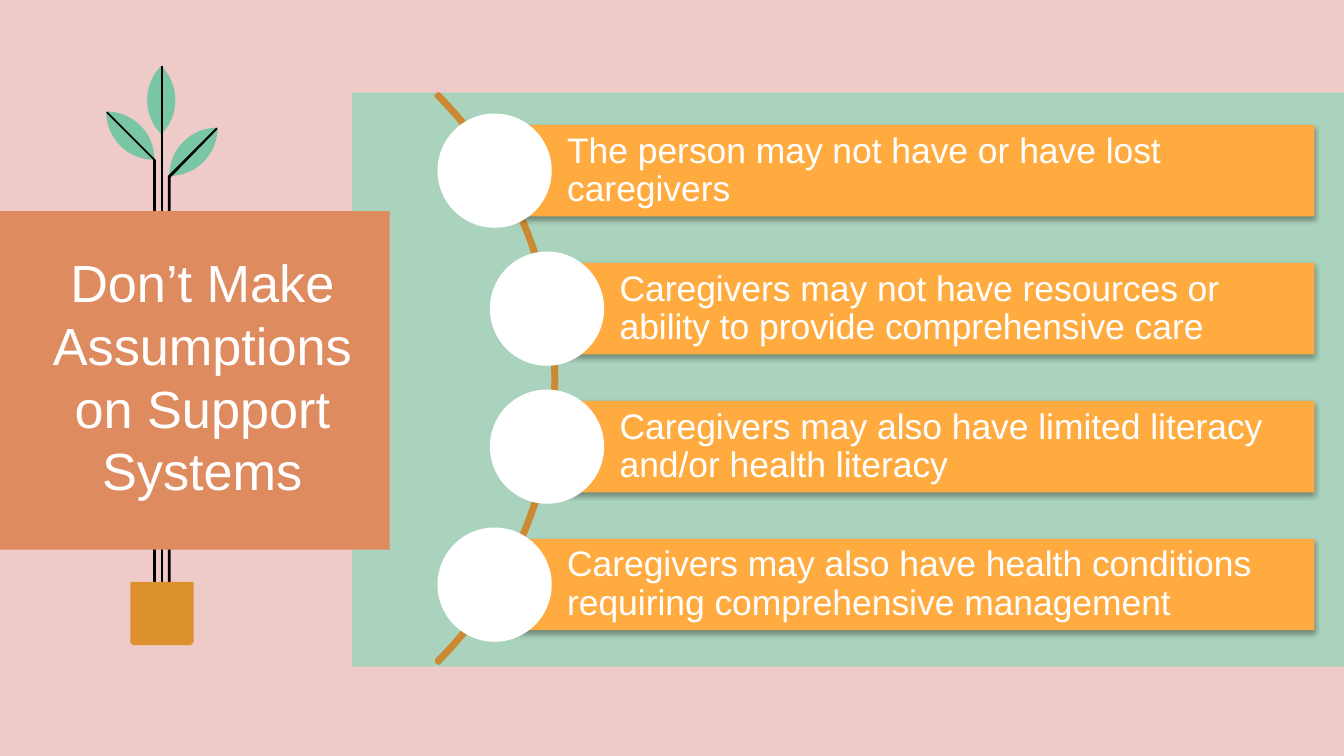
"""Builds a slide on assumptions about support systems."""
from lxml import etree
from pptx import Presentation
from pptx.dml.color import RGBColor
from pptx.enum.shapes import MSO_SHAPE as SHAPE
from pptx.enum.text import MSO_ANCHOR as ANCHOR, PP_ALIGN as ALIGN
from pptx.oxml.ns import qn
from pptx.util import Inches, Pt

PINK, MINT, LEAF, CLAY = "EECAC8", "AAD3BD", "79C6A5", "DF8B60"
POT, ARC, AMBER, WHITE, BLACK = "DD902E", "CC8933", "FFAB40", "FFFFFF", "000000"

POINTS = [
    (3.68, "The person may not have or have lost caregivers"),
    (4.07, "Caregivers may not have resources or ability to provide comprehensive care"),
    (4.07, "Caregivers may also have limited literacy and/or health literacy"),
    (3.68, "Caregivers may also have health conditions requiring comprehensive management"),
]
LEAVES = [
    [(0.79, 0.83), (0.79, 1.03), (0.95, 1.19), (1.15, 1.19), (1.15, 0.99), (0.99, 0.83)],
    [(1.62, 0.95), (1.42, 0.95), (1.26, 1.11), (1.26, 1.31), (1.46, 1.31), (1.62, 1.15)],
    [(1.2, 0.49), (1.06, 0.63), (1.06, 0.86), (1.2, 1), (1.34, 0.86), (1.34, 0.63)],
]
STEMS = [
    [(1.2, 0.49), (1.2, 1.64), (1.21, 1.64), (1.21, 0.49)],
    [(1.61, 0.95), (1.25, 1.31), (1.25, 1.64), (1.27, 1.64), (1.27, 1.32), (1.62, 0.96)],
    [(0.8, 0.83), (0.79, 0.84), (1.14, 1.19), (1.14, 1.64), (1.16, 1.64), (1.16, 1.19)],
]
POT_OUTLINE = [(0.97, 4.33), (0.97, 4.78), (0.99, 4.8), (1.42, 4.8), (1.44, 4.78), (1.44, 4.33)]
LOWER_STEMS_DROP = 2.76
BAR_RIGHT, BAR_TOP, BAR_HEIGHT, BAR_PITCH = 9.78, 0.93, 0.68, 3.08 / 3
CIRCLE = 0.85


def rgb(color):
    """Turn a hex string into a colour."""
    return RGBColor.from_string(color)


def paint(sp, fill):
    """Give a shape a flat fill with no line and no shadow."""
    sp.shadow.inherit = False
    sp.fill.solid()
    sp.fill.fore_color.rgb = rgb(fill)
    sp.line.fill.background()
    return sp


def add_shape(slide, kind, left, top, width, height, fill):
    """Add a flat preset shape."""
    box = map(Inches, (left, top, width, height))
    return paint(slide.shapes.add_shape(kind, *box), fill)


def add_outline(slide, points, fill):
    """Add a flat closed polygon."""
    (x, y), *rest = [(Inches(x), Inches(y)) for x, y in points]
    builder = slide.shapes.build_freeform(x, y)
    builder.add_line_segments(rest, close=True)
    return paint(builder.convert_to_shape(), fill)


def curve(a, b, c, d, steps=16):
    """Sample a cubic curve, leaving out its end point."""
    return [
        tuple((1 - t) ** 3 * p + 3 * (1 - t) ** 2 * t * q + 3 * (1 - t) * t * t * r + t ** 3 * s
              for p, q, r, s in zip(a, b, c, d))
        for t in (i / steps for i in range(steps))
    ]


def add_stems(slide, drop=0):
    """Add the three plant stems, moved down by a drop."""
    for stem in STEMS:
        add_outline(slide, [(x, y + drop) for x, y in stem], BLACK)


def add_plant(slide):
    """Add the pot, the leaves and both stretches of stem."""
    add_stems(slide, LOWER_STEMS_DROP)
    add_outline(slide, POT_OUTLINE, POT)
    for tip, c1, c2, base, c3, c4 in LEAVES:
        add_outline(slide, curve(tip, c1, c2, base) + curve(base, c3, c4, tip), LEAF)
    add_stems(slide)


def write(sp, text, size, color=WHITE, align=ALIGN.LEFT, anchor=ANCHOR.MIDDLE,
          spacing=1.0, insets=(0.1, 0.1, 0.1, 0.1)):
    """Put one formatted paragraph into a shape."""
    tf = sp.text_frame
    tf.word_wrap = True
    tf.vertical_anchor = anchor
    tf.margin_left, tf.margin_top, tf.margin_right, tf.margin_bottom = map(Inches, insets)
    p = tf.paragraphs[0]
    p.alignment, p.line_spacing = align, spacing
    r = p.add_run()
    r.text = text
    r.font.name, r.font.size = "Arial", Pt(size)
    r.font.color.rgb = rgb(color)


def add_drop_shadow(sp):
    """Give a shape a soft shadow straight below it."""
    effects = sp._element.spPr.find(qn("a:effectLst"))
    shadow = etree.SubElement(effects, qn("a:outerShdw"), blurRad=str(Pt(3.1)),
                              dist=str(Pt(1.8)), dir="5400000", rotWithShape="0")
    color = etree.SubElement(shadow, qn("a:srgbClr"), val=BLACK)
    etree.SubElement(color, qn("a:alpha"), val="35000")


def add_title(slide):
    """Add the clay panel and the title on it."""
    add_shape(slide, SHAPE.RECTANGLE, 0, 1.57, 2.9, 2.52, CLAY)
    title = slide.shapes.add_textbox(*map(Inches, (0.27, 1.77, 2.47, 2.06)))
    write(title, "Don’t Make Assumptions on Support Systems", 28,
          align=ALIGN.CENTER, anchor=ANCHOR.BOTTOM)


def add_arc(slide):
    """Add the arc that links the circles."""
    arc = add_shape(slide, SHAPE.BLOCK_ARC, -1.85, -0.18, 5.99, 5.99, ARC)
    for i, value in enumerate((189, 27, 0.004)):
        arc.adjustments[i] = value
    arc.fill.background()
    arc.line.color.rgb = rgb(ARC)
    arc.line.width = Pt(2)


def add_point(slide, left, top, text):
    """Add a bar with its text and a circle centred on its left edge."""
    bar = add_shape(slide, SHAPE.RECTANGLE, left, top, BAR_RIGHT - left, BAR_HEIGHT, AMBER)
    add_drop_shadow(bar)
    write(bar, text, 19, spacing=0.9, insets=(0.54, 0.05, 0.05, 0.05))
    add_shape(slide, SHAPE.OVAL, left - CIRCLE / 2, top + (BAR_HEIGHT - CIRCLE) / 2,
              CIRCLE, CIRCLE, WHITE)


def main():
    """Build and save the slide."""
    prs = Presentation()
    prs.slide_width, prs.slide_height = Inches(10), Inches(10 * 9 / 16)
    slide = prs.slides.add_slide(prs.slide_layouts[6])
    slide.background.fill.solid()
    slide.background.fill.fore_color.rgb = rgb(PINK)
    add_shape(slide, SHAPE.RECTANGLE, 2.62, 0.69, 7.39, 4.27, MINT)
    add_plant(slide)
    add_title(slide)
    add_arc(slide)
    for i, (left, text) in enumerate(POINTS):
        add_point(slide, left, BAR_TOP + i * BAR_PITCH, text)
    prs.save("out.pptx")


if __name__ == "__main__":
    main()
